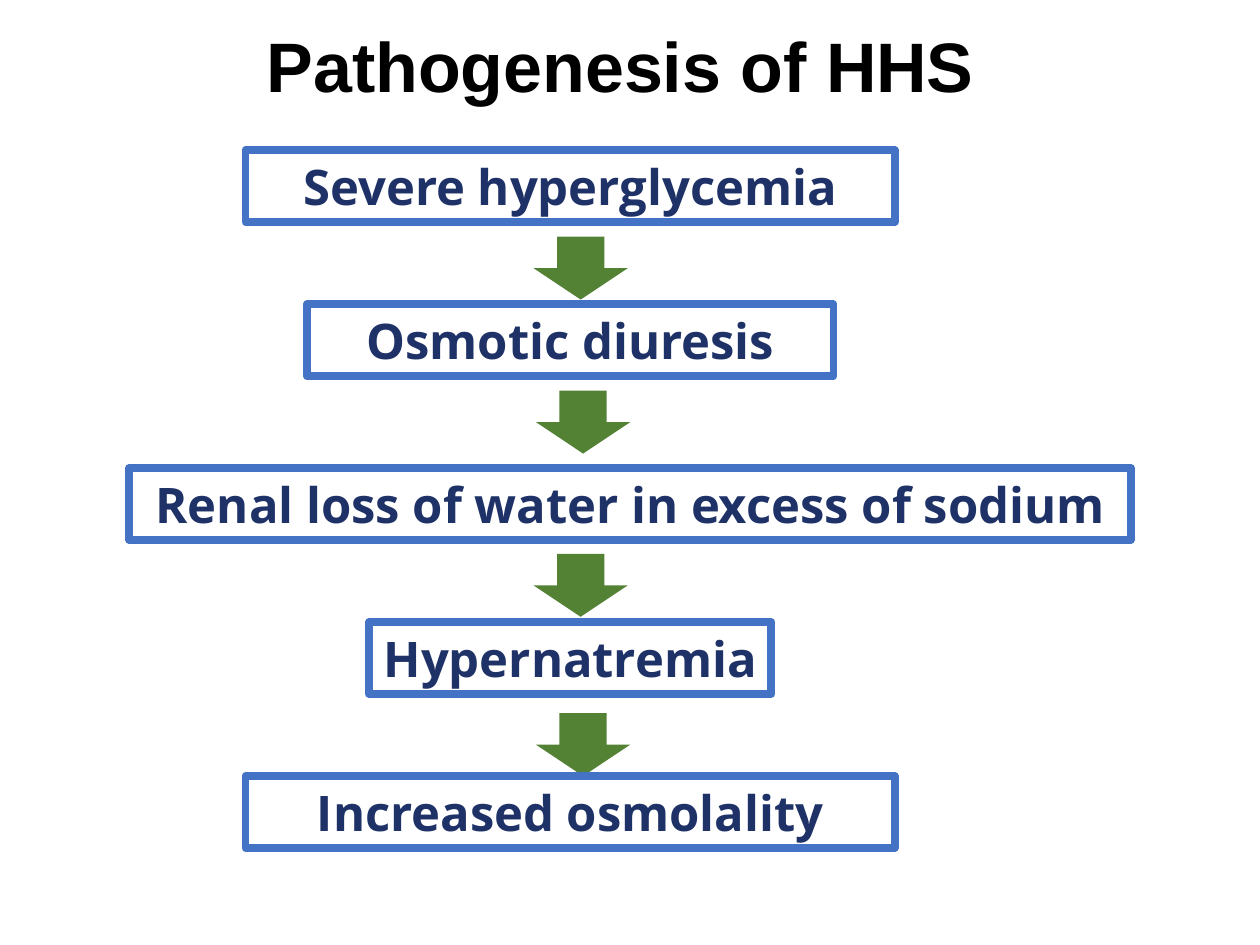
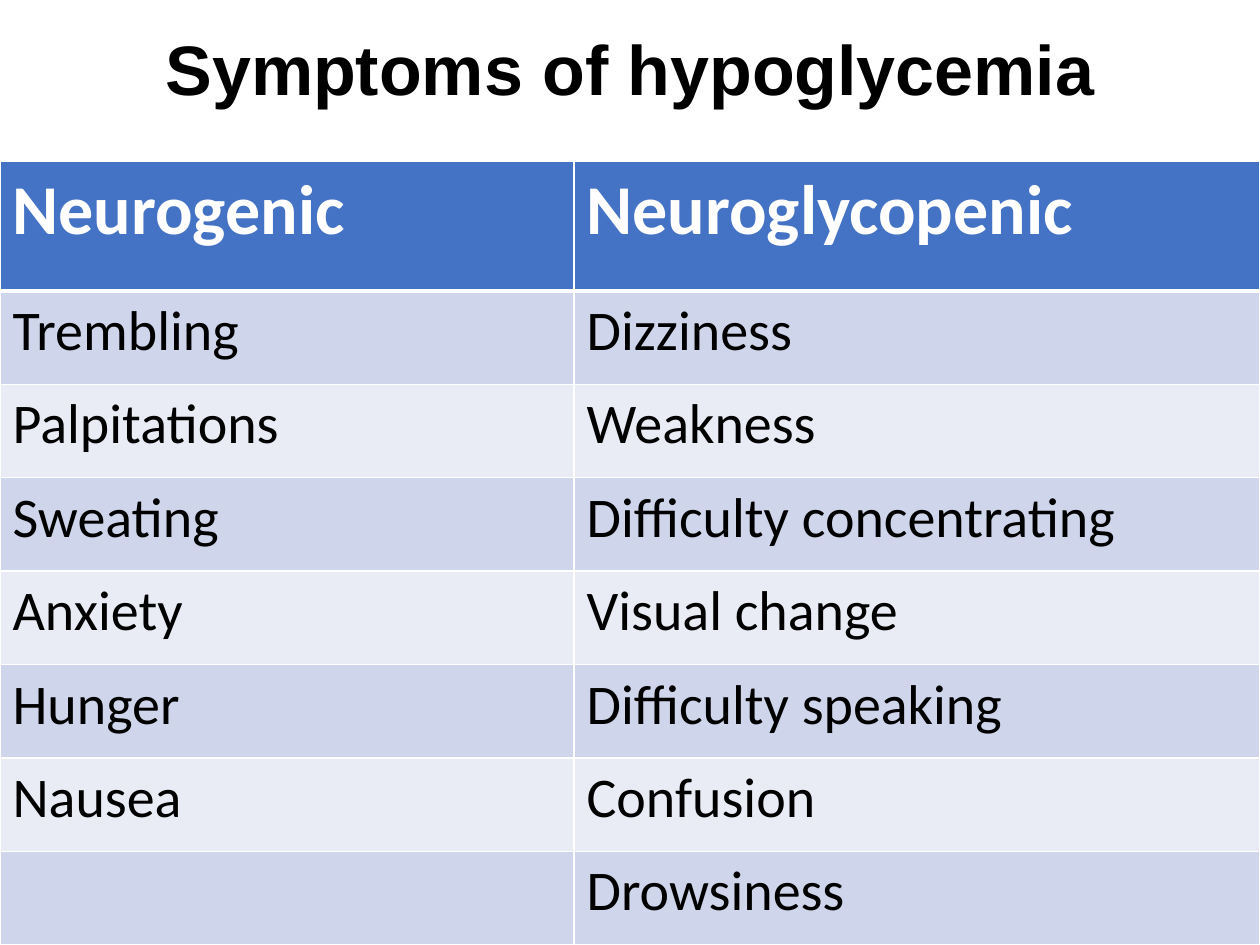
import lxml.etree
import pptx
import pptx.dml.color
import pptx.enum.shapes
import pptx.enum.text
import pptx.oxml.ns
import pptx.util

Pt = pptx.util.Pt
SHAPES = pptx.enum.shapes.MSO_SHAPE
ALIGN = pptx.enum.text.PP_ALIGN
MIDDLE = pptx.enum.text.MSO_ANCHOR.MIDDLE
SLIDE_WIDTH, SLIDE_HEIGHT = 720, 540

BLACK, WHITE = "000000", "FFFFFF"
BLUE, NAVY, GREEN = "4472C4", "1E3268", "548235"
BANDS = ("CFD5EA", "E9EBF5")


def color(hex_code):
    return pptx.dml.color.RGBColor.from_string(hex_code)


def set_border(cell, side, width):
    """Draw one white cell edge; side is L, R, T or B. Call before filling the cell."""
    properties = cell._tc.get_or_add_tcPr()
    line = lxml.etree.SubElement(
        properties, pptx.oxml.ns.qn(f"a:ln{side}"), w=str(Pt(width)))
    fill = lxml.etree.SubElement(line, pptx.oxml.ns.qn("a:solidFill"))
    lxml.etree.SubElement(fill, pptx.oxml.ns.qn("a:srgbClr"), val=WHITE)


class Deck:
    """Holds the presentation, its style and the slide being filled."""

    def __init__(self):
        self.presentation = pptx.Presentation()
        self.presentation.slide_width = Pt(SLIDE_WIDTH)
        self.presentation.slide_height = Pt(SLIDE_HEIGHT)
        self.slide = None

    def new_slide(self):
        self.slide = self.presentation.slides.add_slide(self.presentation.slide_layouts[6])

    def set_text(self, text_frame, text, font_name, size, hex_code, bold, align):
        paragraph = text_frame.paragraphs[0]
        paragraph.text = text
        paragraph.alignment = align
        font = paragraph.font
        font.name, font.size, font.bold = font_name, Pt(size), bold
        font.color.rgb = color(hex_code)
        return paragraph

    def title(self, text, height):
        box = self.slide.shapes.add_textbox(0, 0, Pt(SLIDE_WIDTH), Pt(height))
        box.text_frame.word_wrap = True
        box.text_frame.vertical_anchor = MIDDLE
        paragraph = self.set_text(box.text_frame, text, "Arial", 40, BLACK, True, ALIGN.CENTER)
        paragraph.line_spacing = 0.9

    def step_box(self, text, center, top, width, height=41):
        box = self.slide.shapes.add_shape(
            SHAPES.RECTANGLE, Pt(center - width / 2), Pt(top), Pt(width), Pt(height))
        box.shadow.inherit = False
        box.fill.background()
        box.line.color.rgb = color(BLUE)
        box.line.width = Pt(4.5)
        box.text_frame.word_wrap = False
        box.text_frame.vertical_anchor = MIDDLE
        self.set_text(box.text_frame, text, "Open Sans", 28, NAVY, True, ALIGN.CENTER)

    def down_arrow(self, left, top):
        arrow = self.slide.shapes.add_shape(
            SHAPES.DOWN_ARROW, Pt(left), Pt(top), Pt(54), Pt(36))
        arrow.shadow.inherit = False
        arrow.fill.solid()
        arrow.fill.fore_color.rgb = color(GREEN)
        arrow.line.fill.background()

    def table(self, rows, top, column_widths, header_height):
        """Fill the slide below top with a banded table; the first row is the header."""
        table = self.slide.shapes.add_table(
            len(rows), len(column_widths), 0, Pt(top),
            Pt(SLIDE_WIDTH), Pt(SLIDE_HEIGHT - top)).table
        for column, width in zip(table.columns, column_widths):
            column.width = Pt(width)
        row_height = (SLIDE_HEIGHT - top - header_height) / (len(rows) - 1)
        for row_index, texts in enumerate(rows):
            is_header = row_index == 0
            table.rows[row_index].height = Pt(header_height if is_header else row_height)
            for column_index, text in enumerate(texts):
                cell = table.cell(row_index, column_index)
                for side in "LRTB":
                    under_header = (row_index, side) in ((0, "B"), (1, "T"))
                    set_border(cell, side, 3 if under_header else 1)
                cell.fill.solid()
                cell.fill.fore_color.rgb = color(
                    BLUE if is_header else BANDS[(row_index - 1) % 2])
                self.set_text(cell.text_frame, text, "Calibri", 40 if is_header else 32,
                              WHITE if is_header else BLACK, is_header, ALIGN.LEFT)


def add_pathogenesis(deck):
    deck.new_slide()
    deck.title("Pathogenesis of HHS ", 80)
    # Text, center, top and width of each step
    steps = [
        ("Severe hyperglycemia", 325.8, 85.8, 371),
        ("Osmotic diuresis", 325.8, 174, 301),
        ("Renal loss of water in excess of sodium", 360, 267.5, 572.5),
        ("Hypernatremia", 325.8, 355.5, 230),
        ("Increased osmolality", 325.8, 443.5, 371),
    ]
    # Left and top of the arrow after each step but the last
    arrows = [(304.8, 135.2), (306.2, 223.2), (304.8, 316.5), (306.2, 407.5)]
    deck.step_box(*steps[0])
    for arrow, step in zip(arrows, steps[1:]):
        deck.down_arrow(*arrow)
        deck.step_box(*step)


def add_symptoms(deck):
    deck.new_slide()
    rows = [
        ("Neurogenic", "Neuroglycopenic"),
        ("Trembling", "Dizziness"),
        ("Palpitations", "Weakness"),
        ("Sweating", "Difficulty concentrating"),
        ("Anxiety", "Visual change"),
        ("Hunger", "Difficulty speaking"),
        ("Nausea", "Confusion"),
        ("", "Drowsiness"),
    ]
    deck.table(rows, top=92.2, column_widths=(328, 392), header_height=74)
    deck.title("Symptoms of hypoglycemia", 83.5)


def main():
    deck = Deck()
    add_pathogenesis(deck)
    add_symptoms(deck)
    deck.presentation.save("out.pptx")


if __name__ == "__main__":
    main()
